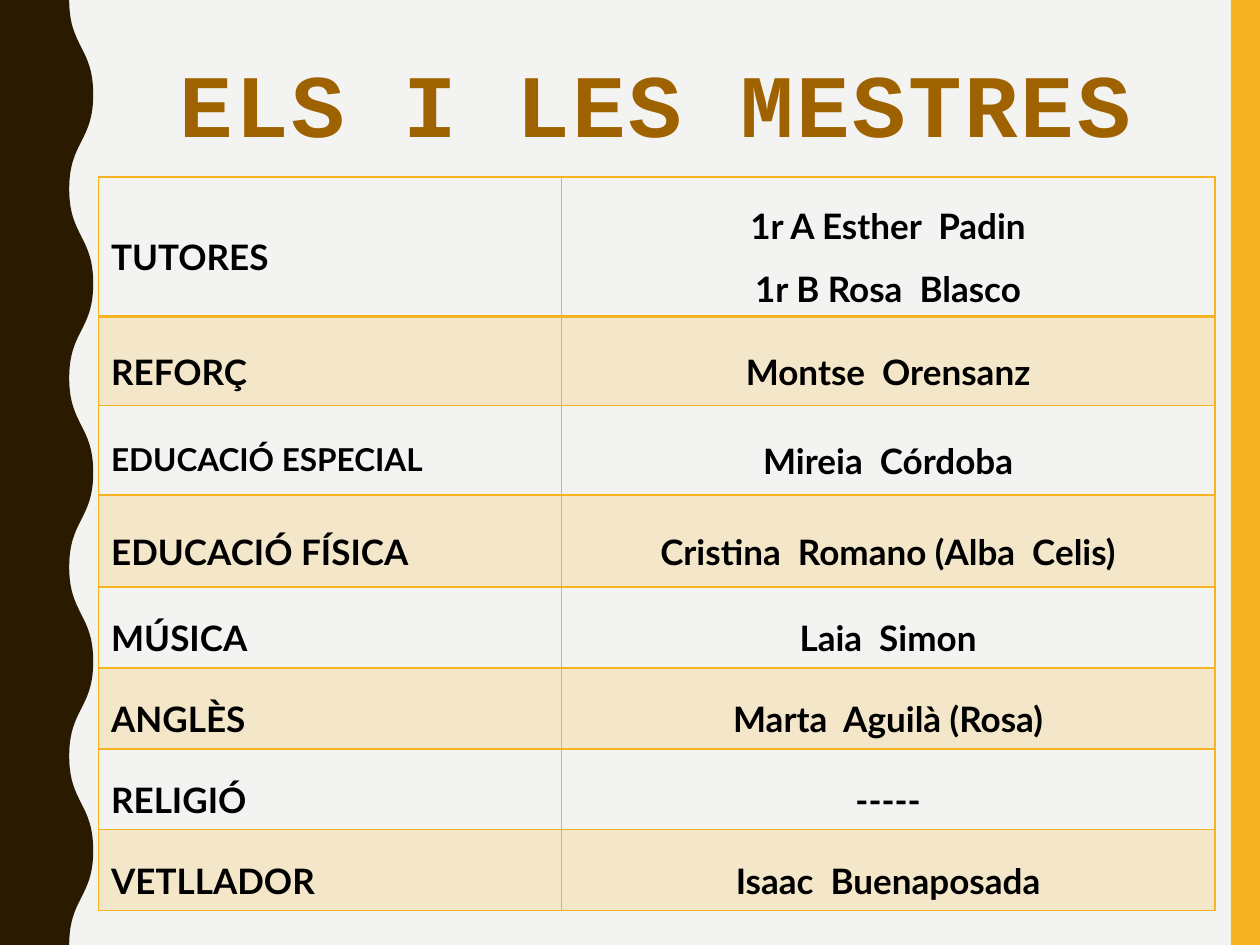
from lxml.etree import SubElement
from pptx import Presentation
from pptx.dml.color import RGBColor
from pptx.enum.shapes import MSO_SHAPE
from pptx.enum.text import MSO_ANCHOR, PP_ALIGN
from pptx.oxml.ns import qn
from pptx.util import Pt

WIDTH, HEIGHT = 720, 540
PAPER, GOLD, BROWN, BLACK = "F3F3F2", "F8B323", "2A1A00", "000000"
TITLE_COLOUR = "9F6200"
COLUMN_WIDTHS = [264.5, 373.5]
ROWS = [
    ("TUTORES", ["1r A Esther  Padin", "1r B Rosa  Blasco"], 79.6),
    ("REFORÇ", ["Montse  Orensanz"], 51),
    ("EDUCACIÓ ESPECIAL", ["Mireia  Córdoba"], 51),
    ("EDUCACIÓ FÍSICA", ["Cristina  Romano (Alba  Celis)"], 52.8),
    ("MÚSICA", ["Laia  Simon"], 46.2),
    ("ANGLÈS", ["Marta  Aguilà (Rosa)"], 46.2),
    ("RELIGIÓ", ["-----"], 46.2),
    ("VETLLADOR", ["Isaac  Buenaposada"], 46.2),
]


def colour(value):
    """Turn a hex string into a colour."""
    return RGBColor.from_string(value)


def paint(shape, value):
    """Give a shape a plain fill without line or shadow."""
    shape.fill.solid()
    shape.fill.fore_color.rgb = colour(value)
    shape.line.fill.background()
    shape.shadow.inherit = False


def write_lines(frame, lines, font_name, size, value, alignment, spacing):
    """Write each line as a bold paragraph and return the runs."""
    runs = []
    for index, line in enumerate(lines):
        paragraph = frame.add_paragraph() if index else frame.paragraphs[0]
        paragraph.alignment = alignment
        paragraph.line_spacing = spacing
        run = paragraph.add_run()
        run.text = line
        run.font.name = font_name
        run.font.size = Pt(size)
        run.font.bold = True
        run.font.color.rgb = colour(value)
        runs.append(run)
    return runs


def bend(segment, start, end):
    """Turn a straight segment into an S-curve with upright ends."""
    segment.tag = qn("a:cubicBezTo")
    for child in list(segment):
        segment.remove(child)
    middle = (start[1] + end[1]) // 2
    for x, y in [(start[0], middle), (end[0], middle), end]:
        SubElement(segment, qn("a:pt"), x=str(x), y=str(y))


def add_wave(slide, left, top, width, height, trough=39.6, half_waves=10):
    """Draw the dark band whose right edge swings between trough and width."""
    edge = [(Pt(width if index % 2 else trough), Pt(height * index / half_waves))
            for index in range(half_waves + 1)]
    builder = slide.shapes.build_freeform(*edge[0])
    builder.add_line_segments(edge[1:] + [(0, Pt(height)), (0, 0)])
    wave = builder.convert_to_shape(Pt(left), Pt(top))
    segments = list(wave._element.iter(qn("a:lnTo")))
    for segment, start, end in zip(segments, edge, edge[1:]):
        bend(segment, start, end)
    paint(wave, BROWN)


def add_side_bar(slide, left, top, width, height):
    """Draw the gold bar at the right edge."""
    bar = slide.shapes.add_shape(
        MSO_SHAPE.RECTANGLE, Pt(left), Pt(top), Pt(width), Pt(height))
    paint(bar, GOLD)


def add_title(slide, left, top, width, height):
    """Place the slide title."""
    box = slide.shapes.add_textbox(Pt(left), Pt(top), Pt(width), Pt(height))
    frame = box.text_frame
    frame.word_wrap = True
    frame.vertical_anchor = MSO_ANCHOR.MIDDLE
    runs = write_lines(frame, ["ELS I LES MESTRES"], "Courier New", 51,
                       TITLE_COLOUR, PP_ALIGN.CENTER, 0.9)
    for run in runs:
        run.font._element.set("spc", "150")


def add_borders(properties, bottom_width):
    """Put gold lines on all four sides of a cell."""
    for position, side in enumerate(["lnL", "lnR", "lnT", "lnB"]):
        width = bottom_width if side == "lnB" else 1
        line = properties.makeelement(qn(f"a:{side}"), {"w": str(Pt(width))})
        fill = SubElement(line, qn("a:solidFill"))
        SubElement(fill, qn("a:srgbClr"), val=GOLD)
        properties.insert(position, line)


def style_cell(cell, shaded, bottom_width):
    """Set the fill, anchor and borders of a cell."""
    cell.vertical_anchor = MSO_ANCHOR.MIDDLE
    properties = cell._tc.get_or_add_tcPr()
    if shaded:
        cell.fill.solid()
        cell.fill.fore_color.rgb = colour(GOLD)
        tint = properties.find(qn("a:solidFill")).find(qn("a:srgbClr"))
        SubElement(tint, qn("a:alpha"), val="20000")
    else:
        cell.fill.background()
    add_borders(properties, bottom_width)


def add_teacher_table(slide, left, top, width, height):
    """Place the table of subjects and teachers."""
    table = slide.shapes.add_table(
        len(ROWS), len(COLUMN_WIDTHS), Pt(left), Pt(top), Pt(width), Pt(height)).table
    table.first_row = False
    table.horz_banding = False
    for column, column_width in zip(table.columns, COLUMN_WIDTHS):
        column.width = Pt(column_width)
    for index, (subject, teachers, row_height) in enumerate(ROWS):
        table.rows[index].height = Pt(row_height)
        subject_size = 18 if subject == "EDUCACIÓ ESPECIAL" else 20
        contents = [([subject], subject_size, PP_ALIGN.LEFT),
                    (teachers, 20, PP_ALIGN.CENTER)]
        for cell, (lines, size, alignment) in zip(table.rows[index].cells, contents):
            write_lines(cell.text_frame, lines, "Lato", size, BLACK, alignment, 1.5)
            style_cell(cell, index % 2 == 1, 1 if index else 2)


def main():
    """Build and save the presentation."""
    presentation = Presentation()
    presentation.slide_width = Pt(WIDTH)
    presentation.slide_height = Pt(HEIGHT)
    slide = presentation.slides.add_slide(presentation.slide_layouts[6])
    slide.background.fill.solid()
    slide.background.fill.fore_color.rgb = colour(PAPER)
    add_side_bar(slide, 703.4, 0, 16.6, HEIGHT)
    add_wave(slide, 0, 0, 53.3, HEIGHT)
    add_title(slide, 74.2, 29.8, 601, 64)
    add_teacher_table(slide, 56.3, 101.2, sum(COLUMN_WIDTHS),
                      sum(row_height for _, _, row_height in ROWS))
    presentation.save("out.pptx")


if __name__ == "__main__":
    main()
